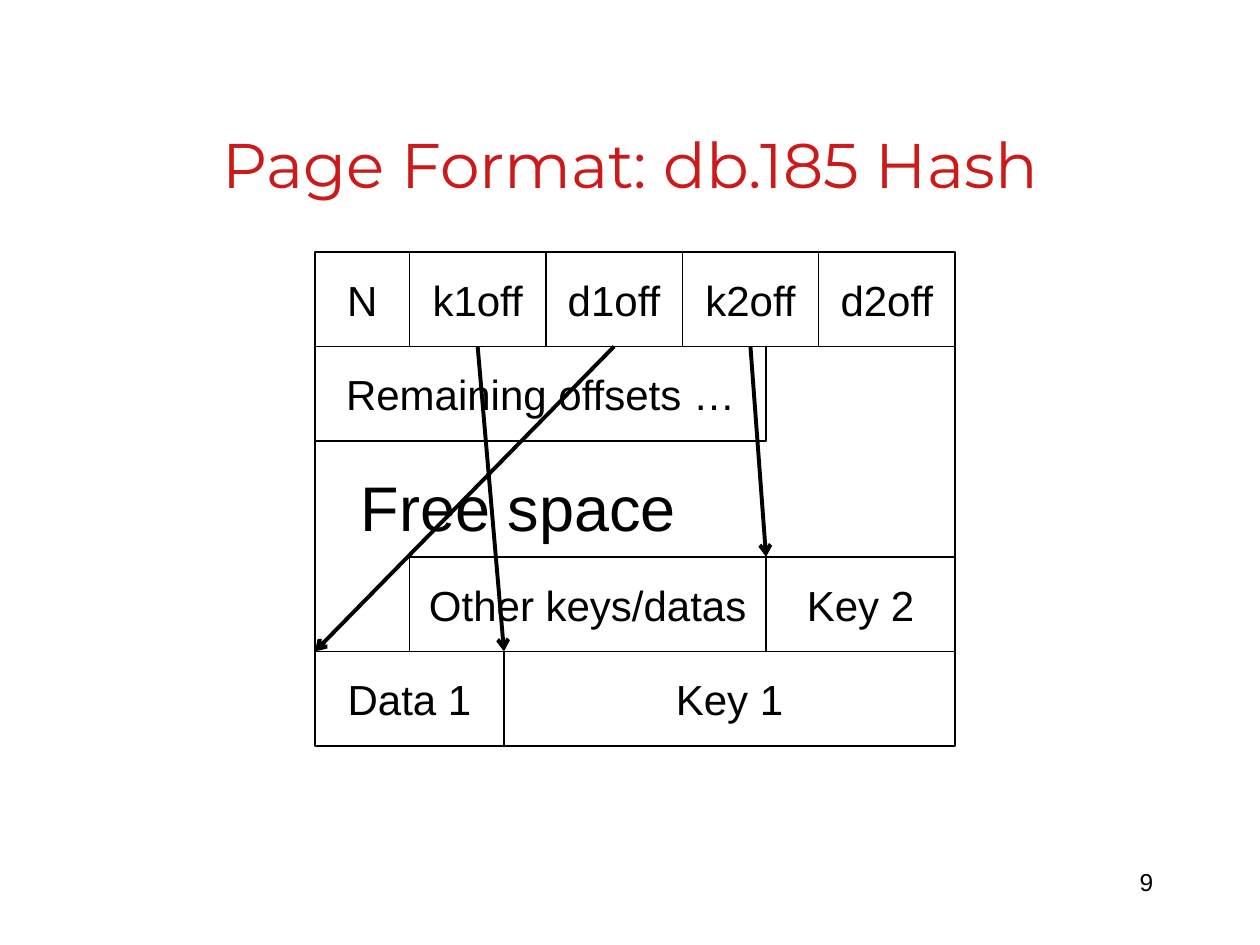
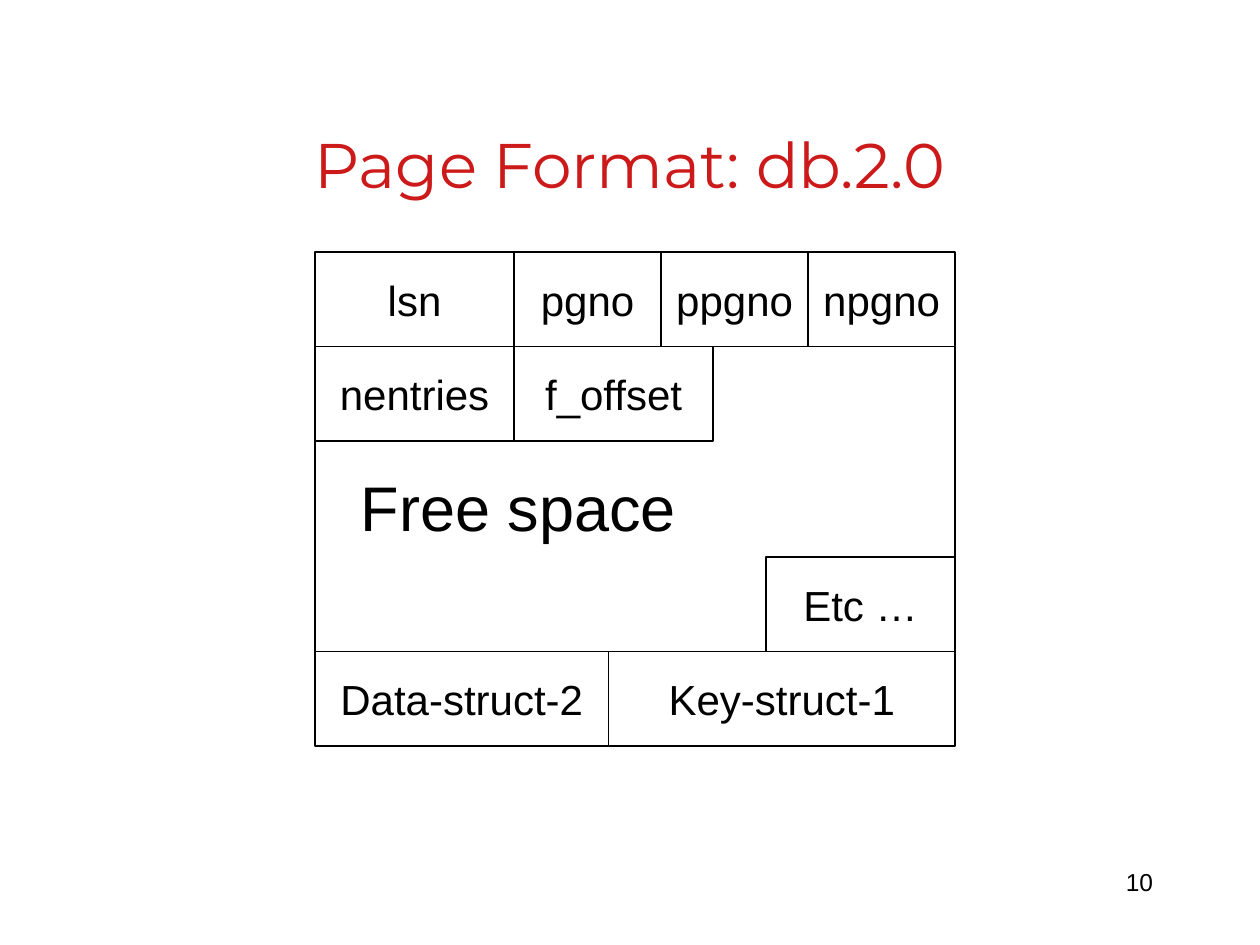
"""Build two slides that show how database pages are laid out."""
from dataclasses import dataclass

from lxml import etree
from pptx import Presentation
from pptx.dml.color import RGBColor
from pptx.enum import shapes, text
from pptx.oxml import ns
from pptx.util import Inches, Pt


@dataclass(frozen=True)
class Theme:
    ink: str = "000000"
    accent: str = "CC1919"
    title_font: str = "Montserrat"
    body_font: str = "Arial"
    title_size: int = 36
    free_size: int = 36
    cell_size: int = 24
    number_size: int = 14
    thin: float = 0.75
    thick: float = 2.25


THEME = Theme()
FRAME_LEFT, FRAME_WIDTH, ROW_HEIGHT = 2.5, 5.08, 0.75
FRAME_RIGHT = FRAME_LEFT + FRAME_WIDTH
ROW_TOPS = (2, 2.75, 4.42, 5.17)
RIGHT_ALIGNED_ROW = 2

# Each cell is (label, width); cells of width None share the rest of the row.
PAGES = [
    {
        "title": "Page Format: db.185 Hash",
        "number": "9",
        "rows": [
            [("N", 0.75), ("k1off", None), ("d1off", None), ("k2off", None), ("d2off", None)],
            [("Remaining offsets …", 3.58)],
            [("Other keys/datas", 2.83), ("Key 2", 1.5)],
            [("Data 1", 1.5), ("Key 1", None)],
        ],
        "pointers": [("k1off", "Key 1"), ("d1off", "Data 1"), ("k2off", "Key 2")],
    },
    {
        "title": "Page Format: db.2.0",
        "number": "10",
        "rows": [
            [("lsn", 1.58), ("pgno", None), ("ppgno", None), ("npgno", None)],
            [("nentries", 1.58), ("f_offset", 1.58)],
            [("Etc …", 1.5)],
            [("Data-struct-2", 2.33), ("Key-struct-1", None)],
        ],
        "pointers": [],
    },
]


def write(shape, content, size=THEME.cell_size, font=THEME.body_font, color=THEME.ink,
          align=text.PP_ALIGN.CENTER, anchor=text.MSO_ANCHOR.MIDDLE, wrap=True):
    frame = shape.text_frame
    frame.word_wrap = wrap
    frame.vertical_anchor = anchor
    para = frame.paragraphs[0]
    para.alignment = align
    span = para.add_run()
    span.text = content
    span.font.size = Pt(size)
    span.font.name = font
    span.font.color.rgb = RGBColor.from_string(color)


def add_text(page, area, content, **style):
    write(page.shapes.add_textbox(*map(Inches, area)), content, **style)


def add_cell(page, label, left, top, width):
    box = page.shapes.add_shape(shapes.MSO_SHAPE.RECTANGLE,
                                *map(Inches, (left, top, width, ROW_HEIGHT)))
    box.shadow.inherit = False
    box.fill.background()
    box.line.color.rgb = RGBColor.from_string(THEME.ink)
    box.line.width = Pt(THEME.thin)
    write(box, label, wrap=False)


def add_line(page, start, end, width=THEME.thin, arrow=False):
    line = page.shapes.add_connector(shapes.MSO_CONNECTOR.STRAIGHT,
                                     *map(Inches, (*start, *end)))
    line.line.color.rgb = RGBColor.from_string(THEME.ink)
    line.line.width = Pt(width)
    properties = line.element.spPr
    if arrow:
        outline = properties.find(ns.qn("a:ln"))
        etree.SubElement(outline, ns.qn("a:tailEnd"), type="arrow")
    etree.SubElement(properties, ns.qn("a:effectLst"))


def place_cells(rows):
    """Map each label to its left, top and width."""
    cells = {}
    for index, (row, top) in enumerate(zip(rows, ROW_TOPS)):
        fixed = sum(width or 0 for _, width in row)
        flexible = sum(width is None for _, width in row)
        share = (FRAME_WIDTH - fixed) / max(flexible, 1)
        left = FRAME_RIGHT - fixed if index == RIGHT_ALIGNED_ROW else FRAME_LEFT
        for label, width in row:
            width = width or share
            cells[label] = (left, top, width)
            left += width
    return cells


def add_free_space(page, rows, cells):
    _, upper, lower, bottom = ROW_TOPS
    upper_left, _, upper_width = cells[rows[1][-1][0]]
    upper_end = upper_left + upper_width
    lower_start = cells[rows[2][0][0]][0]
    corners = [
        (upper_end, upper), (FRAME_RIGHT, upper), (FRAME_RIGHT, lower), (lower_start, lower),
        (lower_start, bottom), (FRAME_LEFT, bottom),
        (FRAME_LEFT, upper + ROW_HEIGHT), (upper_end, upper + ROW_HEIGHT),
    ]
    for start, end in zip(corners, corners[1:] + corners[:1]):
        add_line(page, start, end)
    add_text(page, (2.75, 3.67, 2.73, 0.71), "Free space", size=THEME.free_size,
             anchor=text.MSO_ANCHOR.TOP, wrap=False)


def add_page(deck, content):
    page = deck.slides.add_slide(deck.slide_layouts[6])
    add_text(page, (0.75, 0.67, 8.5, 1.25), content["title"], size=THEME.title_size,
             font=THEME.title_font, color=THEME.accent)
    cells = place_cells(content["rows"])
    for label, area in cells.items():
        add_cell(page, label, *area)
    add_free_space(page, content["rows"], cells)
    for source, target in content["pointers"]:
        left, top, width = cells[source]
        add_line(page, (left + width / 2, top + ROW_HEIGHT), cells[target][:2],
                 width=THEME.thick, arrow=True)
    add_text(page, (7.17, 6.83, 2.08, 0.5), content["number"], size=THEME.number_size,
             align=text.PP_ALIGN.RIGHT, anchor=text.MSO_ANCHOR.TOP)


def main():
    deck = Presentation()
    deck.slide_width, deck.slide_height = Inches(10), Inches(7.5)
    for content in PAGES:
        add_page(deck, content)
    deck.save("out.pptx")


if __name__ == "__main__":
    main()
